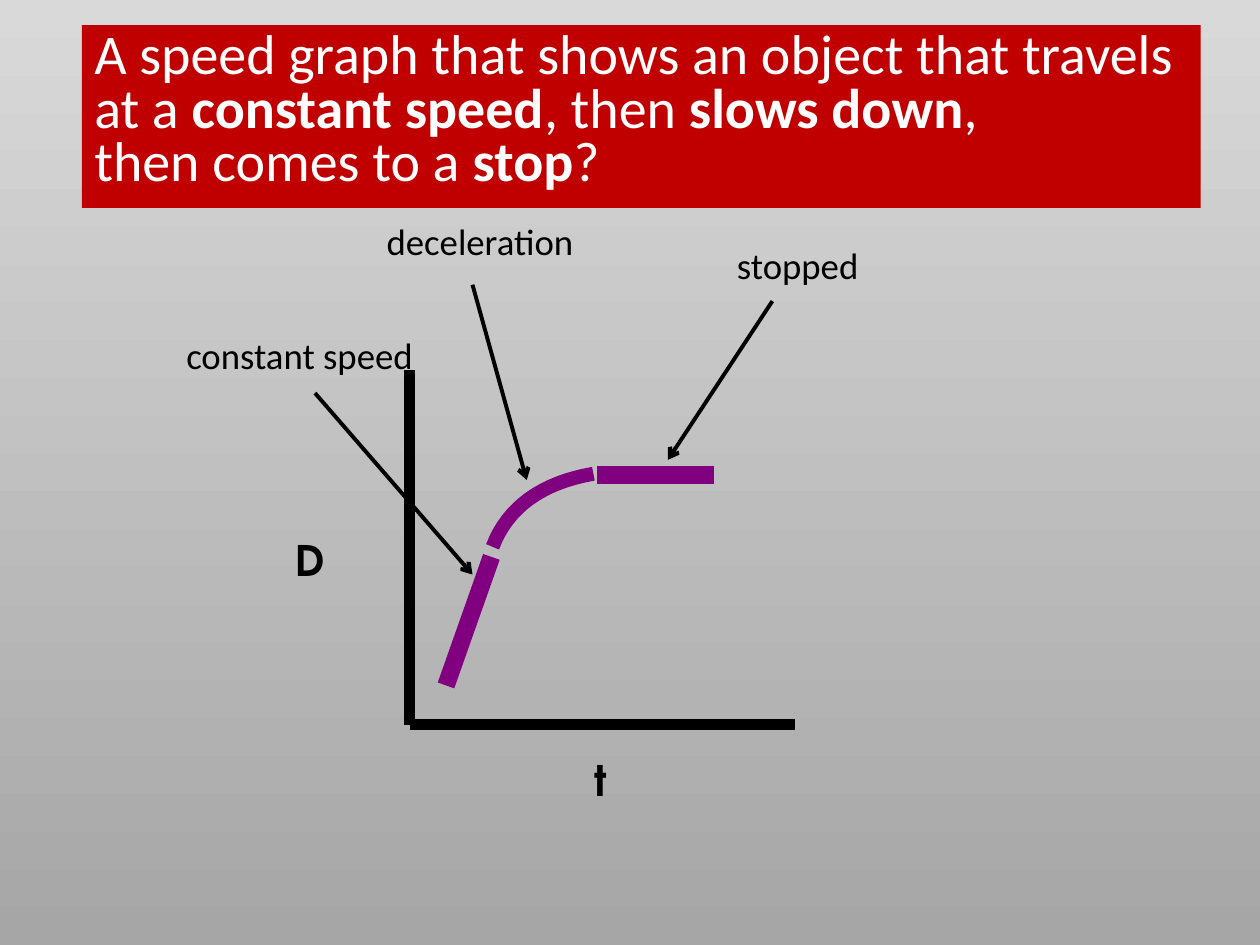
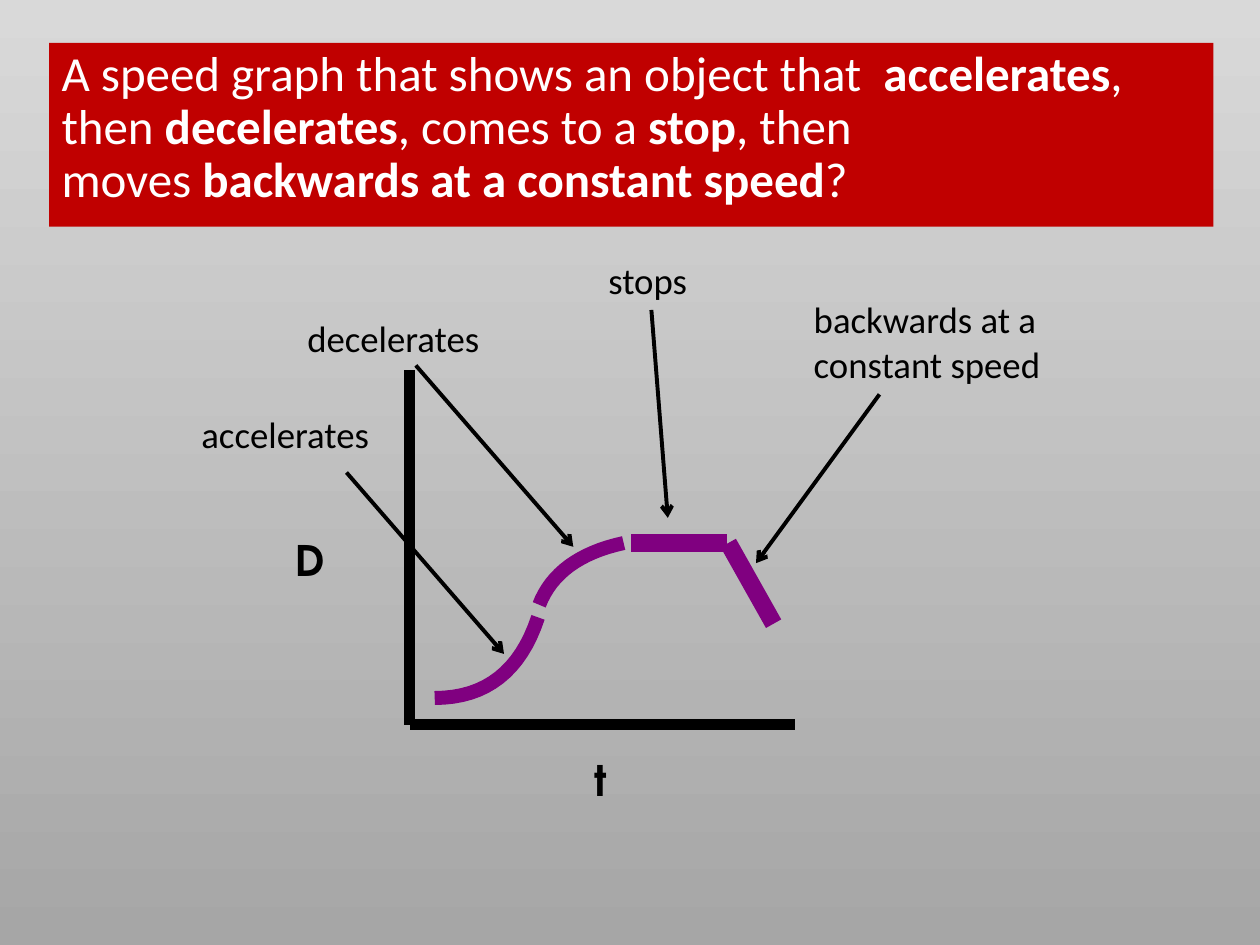
from dataclasses import dataclass
from typing import Any, NamedTuple

from lxml import etree
from pptx import Presentation
from pptx import util as u
from pptx.dml.color import RGBColor
from pptx.enum import shapes, text
from pptx.oxml.ns import qn

# Grid: 40 columns by 30 rows of square cells
WIDE, HIGH = u.Inches(10), u.Inches(7.5)
COLS = 40
CELL = WIDE / COLS


class Spot(NamedTuple):
    x: float
    y: float


class Box(NamedTuple):
    x: float
    y: float
    w: float
    h: float


@dataclass(frozen=True)
class Theme:
    top: str = "D9D9D9"
    base: str = "A6A6A6"
    band: str = "C00000"
    light: str = "FFFFFF"
    ink: str = "000000"
    plot: str = "800080"
    body: str = "Calibri"
    axis: str = "TeX Gyre Adventor"
    note_pt: float = 21
    axis_pt: float = 24
    arrow_pt: float = 2.25
    frame_pt: float = 6
    plot_pt: float = 10
    curve_pt: float = 8


@dataclass(frozen=True)
class Title:
    """Words between asterisks are bold; a tilde is a no-break space."""
    words: str
    box: Box
    size: float
    lead: float


@dataclass(frozen=True)
class Note:
    words: str
    at: Spot
    tail: Spot
    tip: Spot
    rows: float = 1.8


@dataclass(frozen=True)
class Curve:
    start: Spot
    bend: Spot
    end: Spot


@dataclass(frozen=True)
class Graph:
    title: Title
    notes: list[Note]
    curves: list[Curve]
    lines: list[tuple[Spot, Spot]]


THEME = Theme()
NOTE_W = 8.76
STEPS = 16

# Axes shared by both graphs
ROOT = Spot(13, 23)
AXES = [(Spot(13, 11.76), ROOT), (ROOT, Spot(25.24, 23))]
NAMES = [("D", Box(9, 16.76, 1.52, 2)), ("t", Box(18.48, 23.76, 1.52, 2))]

GRAPHS = [
    Graph(
        Title("A speed graph that shows an object that travels at a~*constant speed*"
              ", then *slows down*, then~comes to a *stop*?",
              Box(2.6, 0.8, 35.52, 5.8), 32, 0.8),
        [Note("constant speed", Spot(5.52, 10.36), Spot(10, 12.48), Spot(15, 18.24)),
         Note("deceleration", Spot(11.88, 6.76), Spot(15, 9.04), Spot(16.72, 15.24)),
         Note("stopped", Spot(23, 7.52), Spot(24.52, 9.56), Spot(21.2, 14.6))],
        [Curve(Spot(15.64, 17.36), Spot(16.36, 15.48), Spot(18.84, 15.04))],
        [(Spot(14.16, 21.76), Spot(15.6, 17.68)),
         (Spot(18.96, 15.08), Spot(22.68, 15.08))],
    ),
    Graph(
        Title("A speed graph that shows an object that ~*accelerates*, then~*decelerates*"
              ",~comes to a *stop*,~then moves~*backwards at a constant speed*?",
              Box(1.56, 1.36, 36.96, 5.84), 28, 0.9),
        [Note("accelerates", Spot(6, 12.88), Spot(11, 15), Spot(16, 20.76)),
         Note("decelerates", Spot(9.36, 9.84), Spot(13.2, 11.6), Spot(18.2, 17.36)),
         Note("stops", Spot(18.92, 8), Spot(20.68, 9.84), Spot(21.2, 16.44)),
         Note("backwards at a constant speed", Spot(25.44, 9.24),
              Spot(27.92, 12.52), Spot(24, 17.88), 3.24)],
        [Curve(Spot(13.8, 22.16), Spot(16.24, 22.16), Spot(17.08, 19.6)),
         Curve(Spot(17.12, 19.2), Spot(17.7, 17.7), Spot(19.8, 17.24))],
        [(Spot(20.04, 17.24), Spot(23.08, 17.24)),
         (Spot(23.12, 17.24), Spot(24.56, 19.8))],
    ),
]


# Helpers
def cells(place: tuple) -> list[int]:
    return [round(n * CELL) for n in place]


def apply(item: Any, form: dict[str, Any]) -> None:
    for key, val in form.items():
        setattr(item, key, val)


def stroke(line: Any, color: str, size: float) -> None:
    line.color.rgb = RGBColor.from_string(color)
    line.width = u.Pt(size)


def write(par: Any, words: str, face: str, size: float, color: str,
          bold: bool = False) -> None:
    run = par.add_run()
    run.text = words
    apply(run.font, {"name": face, "size": u.Pt(size), "bold": bold})
    run.font.color.rgb = RGBColor.from_string(color)


# Drawing parts
def paint(slide: Any) -> None:
    fill = slide.background.fill
    fill.gradient()
    fill.gradient_angle = 270
    for stop, color in zip(fill.gradient_stops, (THEME.top, THEME.base)):
        stop.color.rgb = RGBColor.from_string(color)


def draw_line(slide: Any, start: Spot, end: Spot, color: str, size: float,
              arrow: bool = False) -> None:
    link = slide.shapes.add_connector(
        shapes.MSO_CONNECTOR.STRAIGHT, *cells(start), *cells(end))
    stroke(link.line, color, size)
    if arrow:
        etree.SubElement(link.line._get_or_add_ln(), qn("a:tailEnd"), type="arrow")
    etree.SubElement(link._element.spPr, qn("a:effectLst"))


def draw_text(slide: Any, words: str, box: Box, face: str, size: float,
              bold: bool = False) -> None:
    frame = slide.shapes.add_textbox(*cells(box)).text_frame
    apply(frame, {"word_wrap": True,
                  "auto_size": text.MSO_AUTO_SIZE.SHAPE_TO_FIT_TEXT})
    write(frame.paragraphs[0], words, face, size, THEME.ink, bold)


def draw_curve(slide: Any, curve: Curve) -> None:
    dots = []
    for step in range(STEPS + 1):
        t = step / STEPS
        dots.append(cells(tuple(
            (1 - t) ** 2 * a + 2 * t * (1 - t) * b + t ** 2 * c
            for a, b, c in zip(curve.start, curve.bend, curve.end))))
    pen = slide.shapes.build_freeform(*dots[0])
    pen.add_line_segments(dots[1:], close=False)
    arc = pen.convert_to_shape()
    arc.fill.background()
    arc.shadow.inherit = False
    stroke(arc.line, THEME.plot, THEME.curve_pt)


def draw_title(slide: Any, title: Title) -> None:
    band = slide.shapes.add_shape(
        shapes.MSO_SHAPE.RECTANGLE, *cells(title.box))
    band.shadow.inherit = False
    band.fill.solid()
    band.fill.fore_color.rgb = RGBColor.from_string(THEME.band)
    band.line.fill.background()
    frame = band.text_frame
    apply(frame, {"word_wrap": True, "vertical_anchor": text.MSO_ANCHOR.TOP})
    par = frame.paragraphs[0]
    apply(par, {"alignment": text.PP_ALIGN.LEFT, "line_spacing": title.lead,
                "space_before": u.Pt(10)})
    for turn, part in enumerate(title.words.replace("~", chr(160)).split("*")):
        write(par, part, THEME.body, title.size, THEME.light, turn % 2 == 1)


def draw_graph(slide: Any, graph: Graph) -> None:
    paint(slide)
    # Notes and their arrows
    for note in graph.notes:
        draw_line(slide, note.tail, note.tip, THEME.ink, THEME.arrow_pt, True)
        draw_text(slide, note.words, Box(*note.at, NOTE_W, note.rows),
                  THEME.body, THEME.note_pt)
    # Axes
    for start, end in AXES:
        draw_line(slide, start, end, THEME.ink, THEME.frame_pt)
    for name, box in NAMES:
        draw_text(slide, name, box, THEME.axis, THEME.axis_pt, True)
    # Motion
    for curve in graph.curves:
        draw_curve(slide, curve)
    for start, end in graph.lines:
        draw_line(slide, start, end, THEME.plot, THEME.plot_pt)
    draw_title(slide, graph.title)


def main() -> None:
    deck = Presentation()
    apply(deck, {"slide_width": WIDE, "slide_height": HIGH})
    blank = deck.slide_layouts[6]
    for graph in GRAPHS:
        draw_graph(deck.slides.add_slide(blank), graph)
    deck.save("out.pptx")


if __name__ == "__main__":
    main()
